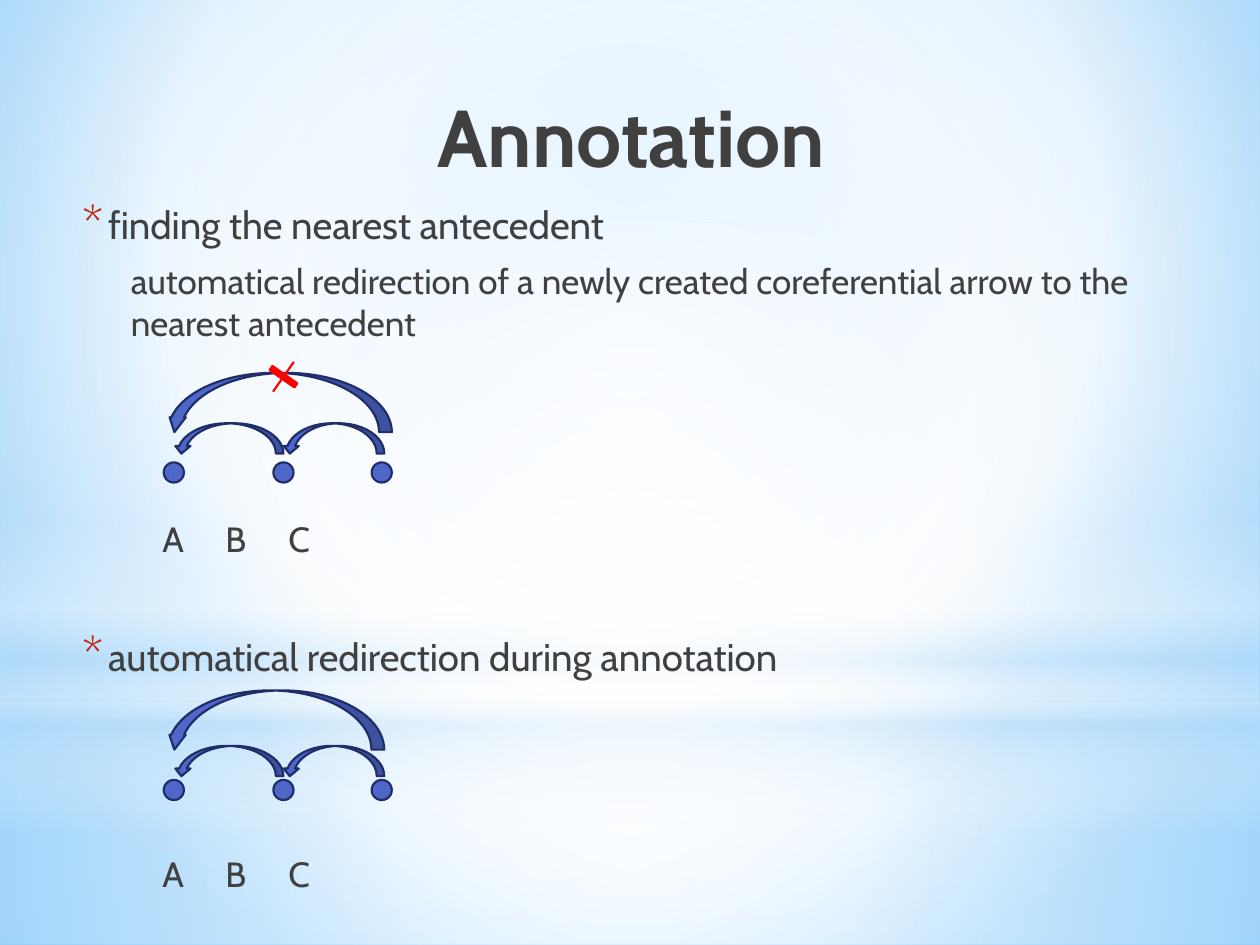
from lxml import etree
from pptx import Presentation
from pptx.dml.color import RGBColor
from pptx.enum.shapes import MSO_SHAPE
from pptx.enum.text import MSO_ANCHOR, PP_ALIGN
from pptx.oxml.ns import qn
from pptx.util import Inches, Pt

RECTANGLE = MSO_SHAPE.RECTANGLE
ELLIPSE = MSO_SHAPE.OVAL
NODE = MSO_SHAPE.FLOWCHART_CONNECTOR
ARC = MSO_SHAPE.CURVED_DOWN_ARROW
CROSS = MSO_SHAPE.CROSS
CENTER = PP_ALIGN.CENTER
LEFT = PP_ALIGN.LEFT
MIDDLE = MSO_ANCHOR.MIDDLE
TOP = MSO_ANCHOR.TOP

COLORS = {
    "text": "404040",
    "bullet": "C3260C",
    "node": "4E67C8",
    "outline": "1F2E69",
    "cross": "FF0000",
    "white": "FFFFFF",
    "haze": "B4DCFA",
    "sky": "9ED5FF",
    "edge": "5BB9FF",
}
FONT = "Cabin"
CIRCLE_CENTER = (50, 50, 50, 50)


def add_child(parent, tag, **attributes):
    values = {key: str(value) for key, value in attributes.items()}
    return etree.SubElement(parent, qn(tag), values)


def replace_with_gradient(properties, stops, focus=None, angle=0):
    solid = properties.find(qn("a:solidFill"))
    gradient = etree.Element(qn("a:gradFill"), rotWithShape="1")
    stop_list = add_child(gradient, "a:gsLst")
    for position, color, opacity in stops:
        stop = add_child(stop_list, "a:gs", pos=position * 1000)
        tone = add_child(stop, "a:srgbClr", val=COLORS[color])
        if opacity < 100:
            add_child(tone, "a:alpha", val=opacity * 1000)
    if focus:
        circle = add_child(gradient, "a:path", path="circle")
        sides = {side: share * 1000 for side, share in zip("ltrb", focus)}
        add_child(circle, "a:fillToRect", **sides)
    else:
        add_child(gradient, "a:lin", ang=angle * 60000, scaled=0)
    properties.replace(solid, gradient)


def write(frame, text, size, bold=False, align=LEFT, before=0, margin=0.0,
          indent=0.0, bullet=None, tabs=()):
    para = frame.paragraphs[0]
    if para.runs:
        para = frame.add_paragraph()
    para.alignment = align
    para.space_before, para.space_after = Pt(before), Pt(3)
    span = para.add_run()
    span.text = text
    span.font.name, span.font.size, span.font.bold = FONT, Pt(size), bold
    span.font.color.rgb = RGBColor.from_string(COLORS["text"])
    properties = para._p.get_or_add_pPr()
    properties.set("marL", str(Inches(margin)))
    properties.set("indent", str(Inches(indent)))
    if bullet:
        color = add_child(properties, "a:buClr")
        add_child(color, "a:srgbClr", val=COLORS["bullet"])
        add_child(properties, "a:buSzPct", val=130000)
        add_child(properties, "a:buFont", typeface=FONT)
        add_child(properties, "a:buChar", char=bullet)
    if tabs:
        tab_list = add_child(properties, "a:tabLst")
        for position in tabs:
            add_child(tab_list, "a:tab", pos=Inches(position), algn="l")


class SlideBuilder:
    def __init__(self, page):
        self.page = page

    def background(self, stops, focus):
        self.page.background.fill.solid()
        properties = self.page.element.find(".//" + qn("p:bgPr"))
        replace_with_gradient(properties, stops, focus)

    def shape(self, kind, bounds, fill="white", outline=None):
        shape = self.page.shapes.add_shape(kind, *map(Inches, bounds))
        shape.shadow.inherit = False
        shape.fill.solid()
        shape.fill.fore_color.rgb = RGBColor.from_string(COLORS[fill])
        if outline:
            shape.line.color.rgb = RGBColor.from_string(COLORS[outline])
            shape.line.width = Pt(1.25)
        else:
            shape.line.fill.background()
        return shape

    def glow(self, kind, bounds, stops, focus=None, angle=0):
        shape = self.shape(kind, bounds)
        replace_with_gradient(shape._element.spPr, stops, focus, angle)

    def text_box(self, bounds, anchor):
        box = self.page.shapes.add_textbox(*map(Inches, bounds))
        box.text_frame.word_wrap = True
        box.text_frame.vertical_anchor = anchor
        return box.text_frame

    def arc(self, bounds, adjustments=()):
        arrow = self.shape(ARC, bounds, "node", "outline")
        arrow._element.spPr.xfrm.set("flipH", "1")
        for index, value in enumerate(adjustments):
            arrow.adjustments[index] = value

    def chain(self, node_top, arc_top, long_width):
        for left in (1.3, 2.17, 2.95):
            self.shape(NODE, (left, node_top, 0.16, 0.16), "node", "outline")
        for left, width in ((1.38, 0.87), (2.24, 0.81)):
            self.arc((left, arc_top, width, 0.24))
        self.arc((1.32, node_top - 0.71, long_width, 0.47), (0.216, 0.273, 0.25))

    def cross(self, bounds, rotation):
        cross = self.shape(CROSS, bounds, "cross", "cross")
        cross.adjustments[0] = 0.5
        cross.rotation = rotation


def main():
    deck = Presentation()
    deck.slide_width, deck.slide_height = Inches(10), Inches(7.5)
    builder = SlideBuilder(deck.slides.add_slide(deck.slide_layouts[6]))

    builder.background(
        [(0, "sky", 100), (60, "white", 100), (100, "edge", 100)], (20, 10, 20, 60))
    builder.glow(RECTANGLE, (0, 5.58, 10, 1.92),
                 [(0, "white", 91), (37, "white", 76), (100, "haze", 79)], CIRCLE_CENTER)
    builder.glow(RECTANGLE, (0, 0, 10, 5.58),
                 [(0, "white", 89), (48, "white", 62), (100, "haze", 79)], CIRCLE_CENTER)
    builder.glow(RECTANGLE, (0, 4.12, 10, 2.5),
                 [(0, "white", 0), (29, "white", 30), (45, "haze", 40),
                  (55, "white", 26), (65, "haze", 60), (100, "white", 0)], angle=90)
    builder.glow(ELLIPSE, (0, 1.75, 10, 5.58),
                 [(0, "white", 100), (56, "white", 0)], CIRCLE_CENTER)

    title = builder.text_box((0.51, 0.6, 9, 0.95), MIDDLE)
    write(title, "Annotation", 46, bold=True, align=CENTER)

    body = builder.text_box((0.51, 1.55, 9, 5.51), TOP)
    bullet_format = {"size": 22, "margin": 0.25, "indent": -0.2, "bullet": "*"}
    label_format = {"size": 20, "margin": 0.68, "before": 96, "tabs": (1.93, 2.75)}
    labels = "A\tB\tC"
    write(body, "finding the nearest antecedent", **bullet_format)
    write(body, "automatical redirection of a newly created coreferential arrow "
          "to the nearest antecedent", 20, margin=0.43, before=4)
    write(body, labels, **label_format)
    write(body, "automatical redirection during annotation", before=39, **bullet_format)
    write(body, labels, **label_format)

    builder.chain(node_top=3.67, arc_top=3.36, long_width=1.79)
    builder.cross((2.13, 2.85, 0.24, 0.28), 34.9)
    builder.chain(node_top=6.19, arc_top=5.92, long_width=1.73)

    deck.save("out.pptx")


if __name__ == "__main__":
    main()
